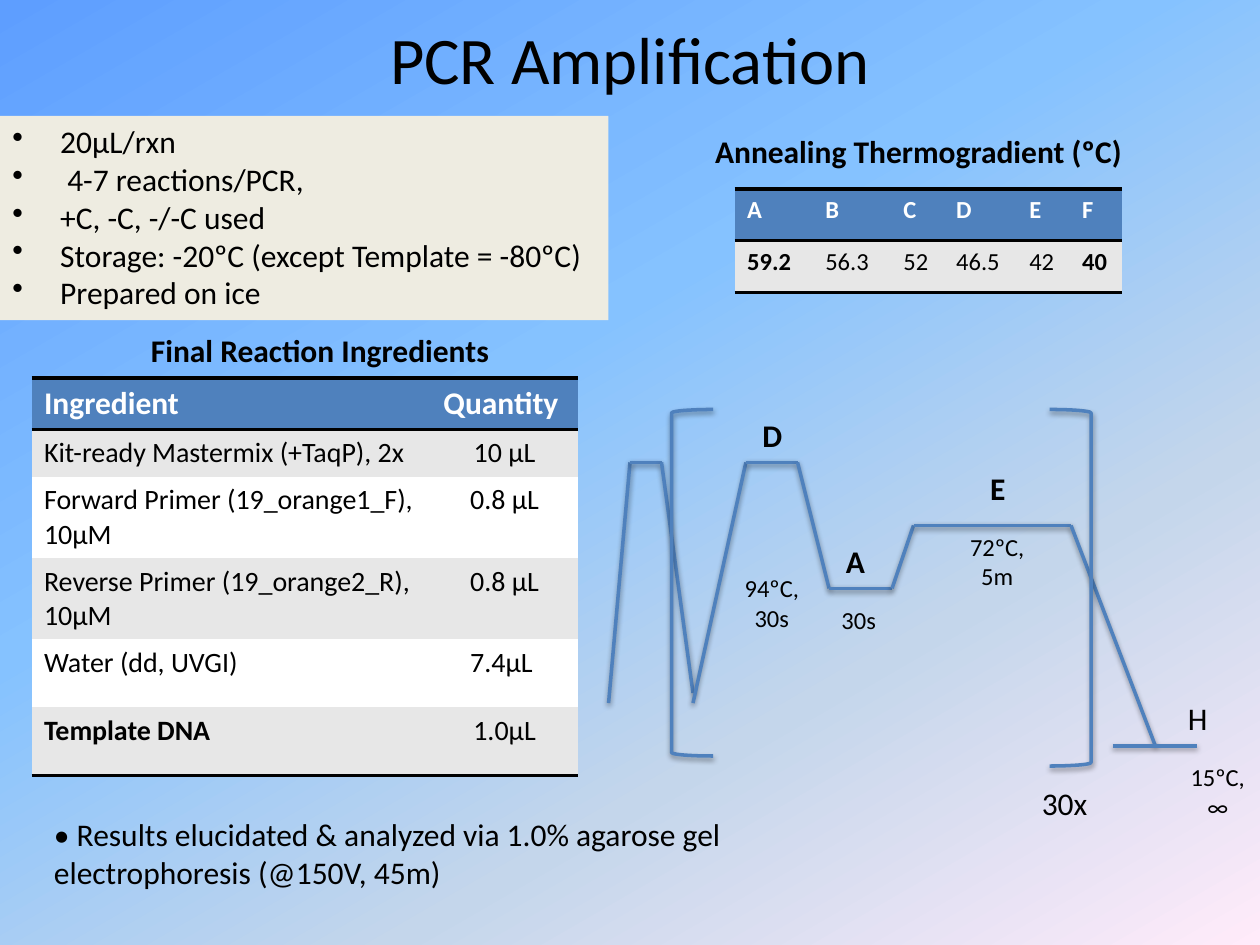
from dataclasses import dataclass
from itertools import pairwise

from lxml import etree
from pptx import Presentation
from pptx.dml.color import RGBColor
from pptx.enum import shapes, text
from pptx.oxml import ns
from pptx.util import Inches, Pt

BLACK = RGBColor(0, 0, 0)
WHITE = RGBColor(255, 255, 255)
BLUE = RGBColor(0x4F, 0x81, 0xBD)
GRAY = RGBColor(0xE7, 0xE7, 0xE7)
CREAM = RGBColor(0xEE, 0xEC, 0xE1)
SKY = [(0, "5E9EFF"), (40, "85C2FF"), (70, "C4D6EB"), (100, "FFEBFA")]
PLAIN = "{2D5ABB26-0587-4C30-8999-92F81FD0307C}"
LEFT, MID = text.PP_ALIGN.LEFT, text.PP_ALIGN.CENTER


@dataclass
class Label:
    words: str
    box: tuple[float, float, float, float]
    size: int = 18
    bold: bool = False
    align: text.PP_ALIGN = MID
    anchor: text.MSO_ANCHOR = text.MSO_ANCHOR.TOP


@dataclass
class Grid:
    """A table; the cells named in strong are bold."""
    left: float
    top: float
    cols: list[float]
    rows: list[float]
    cells: list[list[str]]
    head: int
    body: int
    strong: set[str]
    aligns: list


LABELS = [
    Label("PCR Amplification", (0.5, 0, 9, 0.92), 38,
          anchor=text.MSO_ANCHOR.MIDDLE),
    Label("Final Reaction Ingredients", (0.5, 2.58, 4.08, 0.4), bold=True),
    Label("Annealing Thermogradient (ºC)", (5.33, 1, 3.92, 0.4), bold=True),
    Label("30x", (8.17, 6.17, 0.67, 0.4), align=LEFT),
    Label("• Results elucidated & analyzed via 1.0% agarose gel "
          "electrophoresis (@150V, 45m)", (0.33, 6.42, 6.5, 0.71), align=LEFT),
    Label("H", (9.33, 5.5, 0.42, 0.4), align=LEFT),
    Label("15ºC,∞", (9.33, 6, 0.67, 0.57), 14),
    Label("D", (5.92, 3.25, 0.42, 0.4), bold=True),
    Label("94ºC, 30s", (5.75, 4.5, 0.75, 0.57), 14),
    Label("A", (6.58, 4.25, 0.42, 0.42), bold=True),
    Label("30s", (6.58, 4.75, 0.5, 0.34), 14, align=LEFT),
    Label("E", (7.67, 3.67, 0.5, 0.4), bold=True),
    Label("72ºC,\n5m", (7.5, 4.17, 0.83, 0.57), 14),
]
NOTES = ["20µL/rxn", " 4-7 reactions/PCR,", "+C, -C, -/-C used",
         "Storage: -20ºC (except Template = -80ºC)", "Prepared on ice"]
GRIDS = [
    Grid(0.25, 3, [3.17, 1.17], [0.4, 0.38, 0.64, 0.63, 0.54, 0.54],
         [["Ingredient", "Quantity"],
          ["Kit-ready Mastermix (+TaqP), 2x", "10 µL"],
          ["Forward Primer (19_orange1_F), 10µM", "0.8 µL"],
          ["Reverse Primer (19_orange2_R), 10µM", "0.8 µL"],
          ["Water (dd, UVGI)", "7.4µL "],
          ["Template DNA", "1.0µL"]],
         18, 16, {"Template DNA"}, [LEFT, MID]),
    Grid(5.83, 1.5, [0.62, 0.62, 0.42, 0.58, 0.42, 0.42], [0.41, 0.41],
         [list("ABCDEF"), ["59.2", "56.3", "52", "46.5", "42", "40"]],
         14, 14, {"59.2", "40"}, [LEFT] * 6),
]
CURVES = [
    [(4.83, 5.58), (5, 3.67), (5.25, 3.67), (5.5, 5.5)],
    [(5.5, 5.58), (5.92, 3.67), (6.33, 3.67), (6.58, 4.67), (7.08, 4.67),
     (7.25, 4.17), (8.5, 4.17), (9.17, 5.92)],
    [(8.83, 5.92), (9.5, 5.92)],
]
BRACKETS = [
    (shapes.MSO_SHAPE.LEFT_BRACKET, (5.33, 3.25, 0.33, 2.75)),
    (shapes.MSO_SHAPE.RIGHT_BRACKET, (8.33, 3.25, 0.33, 2.83)),
]


def add(root, tag: str, **attrs):
    return etree.SubElement(root, ns.qn(tag),
                            {k: str(v) for k, v in attrs.items()})


def style(para, size: int, color=BLACK, bold=False, align=LEFT) -> None:
    para.alignment = align
    font = para.font
    font.name, font.size, font.bold = "Calibri", Pt(size), bold
    font.color.rgb = color


def paint(slide) -> None:
    """Give the slide its four-stop gradient."""
    fill = slide.background.fill
    fill.gradient()
    grad = slide.background._cSld.find(".//" + ns.qn("a:gradFill"))
    stops = grad.find(ns.qn("a:gsLst"))
    for old in list(stops):
        stops.remove(old)
    for pos, color in SKY:
        stop = add(stops, "a:gs", pos=pos * 1000)
        add(stop, "a:srgbClr", val=color)
    fill.gradient_angle = 300


def write(slide, label: Label) -> None:
    frame = slide.shapes.add_textbox(*map(Inches, label.box)).text_frame
    frame.word_wrap = True
    frame.vertical_anchor = label.anchor
    frame.text = label.words
    for para in frame.paragraphs:
        style(para, label.size, bold=label.bold, align=label.align)


def list_notes(slide) -> None:
    box = slide.shapes.add_shape(
        shapes.MSO_SHAPE.RECTANGLE, *map(Inches, (0, 0.92, 4.83, 1.62)))
    box.shadow.inherit = False
    box.fill.solid()
    box.fill.fore_color.rgb = CREAM
    box.line.fill.background()
    frame = box.text_frame
    frame.vertical_anchor = text.MSO_ANCHOR.TOP
    frame.text = "\n".join(NOTES)
    for para in frame.paragraphs:
        style(para, 18)
        props = para._p.get_or_add_pPr()
        props.set("marL", str(Inches(0.38)))
        props.set("indent", str(Inches(-0.38)))
        bullet = etree.Element(ns.qn("a:buChar"), {"char": "•"})
        props.insert(0, bullet)


def rule(cell, sides: list[str]) -> None:
    """Draw black borders on the given sides (T, B) of a cell."""
    props = cell._tc.get_or_add_tcPr()
    for spot, side in enumerate(sides):
        edge = etree.Element(ns.qn("a:ln" + side), {"w": str(Pt(2))})
        add(add(edge, "a:solidFill"), "a:srgbClr", val=BLACK)
        props.insert(spot, edge)


def tabulate(slide, grid: Grid) -> None:
    table = slide.shapes.add_table(
        len(grid.rows), len(grid.cols), Inches(grid.left), Inches(grid.top),
        Inches(sum(grid.cols)), Inches(sum(grid.rows))).table
    table._tbl.tblPr.find(ns.qn("a:tableStyleId")).text = PLAIN
    for col, width in zip(table.columns, grid.cols):
        col.width = Inches(width)
    for r, (height, row) in enumerate(zip(grid.rows, grid.cells)):
        table.rows[r].height = Inches(height)
        for c, words in enumerate(row):
            cell = table.cell(r, c)
            cell.text = words
            cell.fill.solid()
            para = cell.text_frame.paragraphs[0]
            if r == 0:
                cell.fill.fore_color.rgb = BLUE
                style(para, grid.head, WHITE, True)
                rule(cell, ["T", "B"])
            else:
                cell.fill.fore_color.rgb = GRAY if r % 2 else WHITE
                style(para, grid.body, bold=words in grid.strong,
                      align=grid.aligns[c])
                if r == len(grid.rows) - 1:
                    rule(cell, ["B"])


def stroke(shape) -> None:
    """Apply the blue line and soft shadow of the cycle diagram."""
    shape.line.color.rgb = BLUE
    shape.line.width = Pt(2)
    glow = add(add(shape._element.spPr, "a:effectLst"), "a:outerShdw",
               blurRad=Pt(3.1), dist=Pt(1.6), dir=90 * 60000, rotWithShape=0)
    add(add(glow, "a:srgbClr", val=BLACK), "a:alpha", val=38000)


def main() -> None:
    deck = Presentation()
    deck.slide_width, deck.slide_height = Inches(10), Inches(7.5)
    slide = deck.slides.add_slide(deck.slide_layouts[6])
    paint(slide)
    list_notes(slide)
    for grid in GRIDS:
        tabulate(slide, grid)
    for curve in CURVES:
        for start, end in pairwise(curve):
            stroke(slide.shapes.add_connector(
                shapes.MSO_CONNECTOR.STRAIGHT, *map(Inches, start + end)))
    for kind, box in BRACKETS:
        shape = slide.shapes.add_shape(kind, *map(Inches, box))
        shape.fill.background()
        stroke(shape)
    for label in LABELS:
        write(slide, label)
    deck.save("out.pptx")


if __name__ == "__main__":
    main()
